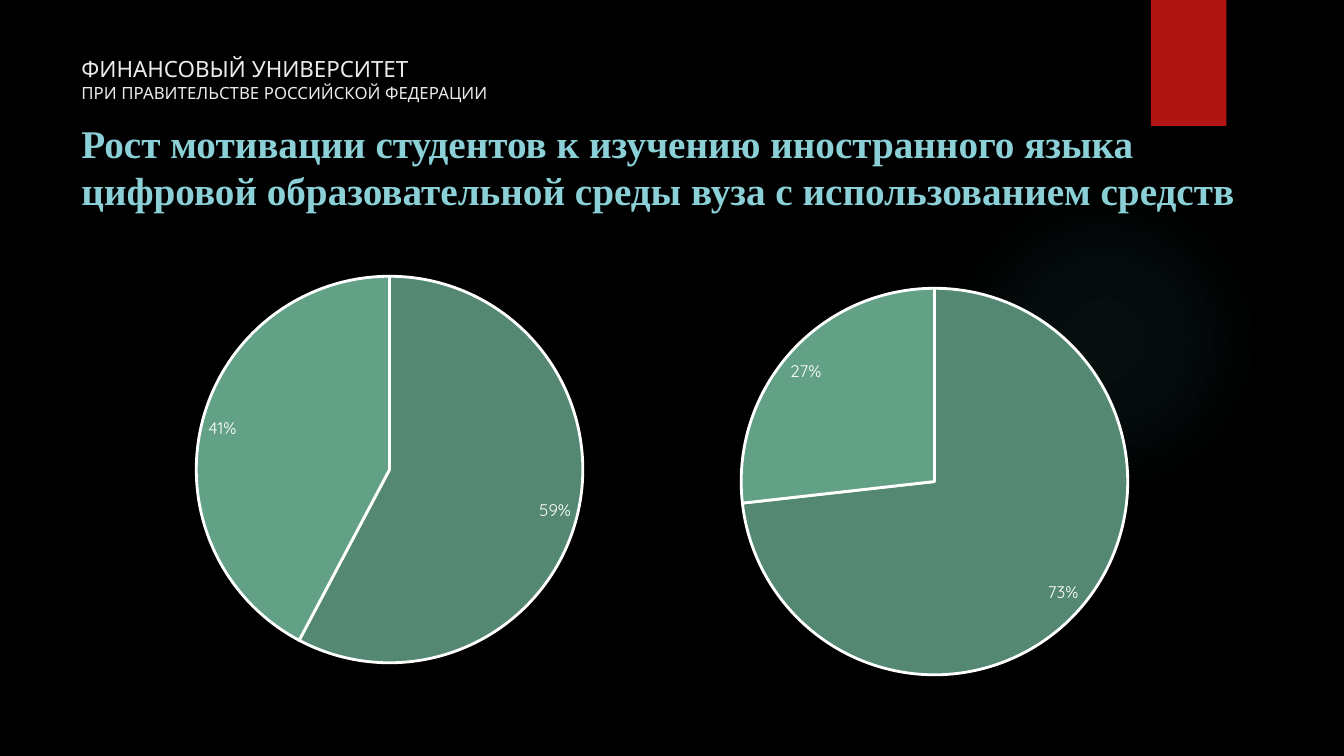
from pptx import Presentation
from pptx.chart.data import CategoryChartData as Data
from pptx.dml.color import RGBColor
from pptx.enum.chart import XL_CHART_TYPE as Kind, XL_LABEL_POSITION as Spot
from pptx.enum.shapes import MSO_SHAPE as Form
from pptx.enum.text import MSO_ANCHOR as Anchor, MSO_AUTO_SIZE as Fit, PP_ALIGN as Align
from pptx.oxml import parse_xml
from pptx.util import Pt

NS = "http://schemas.openxmlformats.org/drawingml/2006/main"
SANS, SERIF = "Quicksand", "Times New Roman"
WHITE, PALE, AQUA, RED = "FFFFFF", "EBEBEB", "8AD0D6", "B01513"
GREENS = ["548872", "63A187"]
GLOW = [("50B9C1", 0, 7), ("50B9C1", 36, 6), ("50B9C1", 69, 0)]


def paint(fill, tone):
    """Fill with a solid hex colour."""
    fill.solid()
    fill.fore_color.rgb = RGBColor.from_string(tone)


def style(font, size, name, tone, bold=False):
    """Set the format of a font."""
    font.size, font.name, font.bold = Pt(size), name, bold
    font.color.rgb = RGBColor.from_string(tone)


def write(para, text, **form):
    """Add a formatted run to a paragraph."""
    run = para.add_run()
    run.text = text
    style(run.font, **form)


def place(item, box):
    """Move an item to a box given in points."""
    item.left, item.top, item.width, item.height = map(Pt, box)


def frame(holder, box):
    """Place a text holder and return its plain left-aligned paragraph."""
    place(holder, box)
    text = holder.text_frame
    text.word_wrap, text.auto_size = True, Fit.NONE
    text.vertical_anchor = Anchor.TOP
    para = text.paragraphs[0]
    props = para._p.get_or_add_pPr()
    props.set("marL", "0")
    props.set("indent", "0")
    props.append(parse_xml(f'<a:buNone xmlns:a="{NS}"/>'))
    para.alignment, para.line_spacing = Align.LEFT, 1.0
    para.space_before = Pt(0)
    return para


def block(slide, form, box, tone):
    """Add a plain shape without outline or shadow."""
    shape = slide.shapes.add_shape(form, *map(Pt, box))
    shape.shadow.inherit = False
    shape.line.fill.background()
    paint(shape.fill, tone)
    return shape


def decor(slide, glow, flag):
    """Draw the soft glow and the red flag."""
    disc = block(slide, Form.OVAL, glow, AQUA)
    stops = "".join(
        f'<a:gs pos="{pos * 1000}"><a:srgbClr val="{tone}">'
        f'<a:alpha val="{alpha * 1000}"/></a:srgbClr></a:gs>'
        for tone, pos, alpha in GLOW)
    solid = disc._element.spPr.find(f"{{{NS}}}solidFill")
    solid.getparent().replace(solid, parse_xml(
        f'<a:gradFill xmlns:a="{NS}"><a:gsLst>{stops}</a:gsLst><a:path path="circle">'
        '<a:fillToRect l="50000" t="50000" r="50000" b="50000"/></a:path></a:gradFill>'))
    block(slide, Form.RECTANGLE, flag, RED)


def head(slide, box):
    """Write the name of the university."""
    para = frame(slide.shapes.title, box)
    write(para, "ФИНАНСОВЫЙ УНИВЕРСИТЕТ", size=16, name=SANS, tone=PALE)
    para.add_line_break()
    write(para, "ПРИ ПРАВИТЕЛЬСТВЕ РОССИЙСКОЙ ФЕДЕРАЦИИ", size=12, name=SANS, tone=PALE)


def topic(slide, box):
    """Write the topic of the slide."""
    para = frame(slide.placeholders[1], box)
    write(para, "Рост мотивации студентов к изучению иностранного языка "
          "цифровой образовательной среды вуза с использованием средств",
          size=28, name=SERIF, tone=AQUA, bold=True)


def pie(slide, box, vals, tags):
    """Add a pie chart with a written share on each slice."""
    data = Data()
    data.categories = ["1", "2"]
    data.add_series("Series 1", vals)
    chart = slide.shapes.add_chart(Kind.PIE, *map(Pt, box), data).chart
    chart.has_legend = chart.has_title = False
    style(chart.font, 10, SANS, WHITE)
    plot = chart.plots[0]
    plot.vary_by_categories = True
    series = plot.series[0]
    labels = series.data_labels
    labels.show_value, labels.position = True, Spot.BEST_FIT
    style(labels.font, 12, SANS, WHITE)
    for i, (tone, tag) in enumerate(zip(GREENS, tags)):
        point = series.points[i]
        paint(point.format.fill, tone)
        paint(point.format.line.fill, WHITE)
        point.format.line.width = Pt(2)
        label = point.data_label
        write(label.text_frame.paragraphs[0], tag, size=12, name=SANS, tone=WHITE)
        label.position = Spot.BEST_FIT


def main():
    """Build and save the slide."""
    deck = Presentation()
    deck.slide_width, deck.slide_height = Pt(960), Pt(540)
    slide = deck.slides.add_slide(deck.slide_layouts[1])
    paint(slide.background.fill, "000000")
    decor(slide, (677.5, 132, 222, 222), (822, 0, 54, 90))
    head(slide, (51, 36, 317, 36))
    topic(slide, (51, 81.5, 862.5, 411))
    pie(slide, (118, 187.4, 320.5, 296), (8.2, 6, None, None), ("59%", "41%"))
    pie(slide, (505.5, 196, 324, 296), (8.2, 3, None, None), ("73%", "27%"))
    deck.save("out.pptx")


if __name__ == "__main__":
    main()
